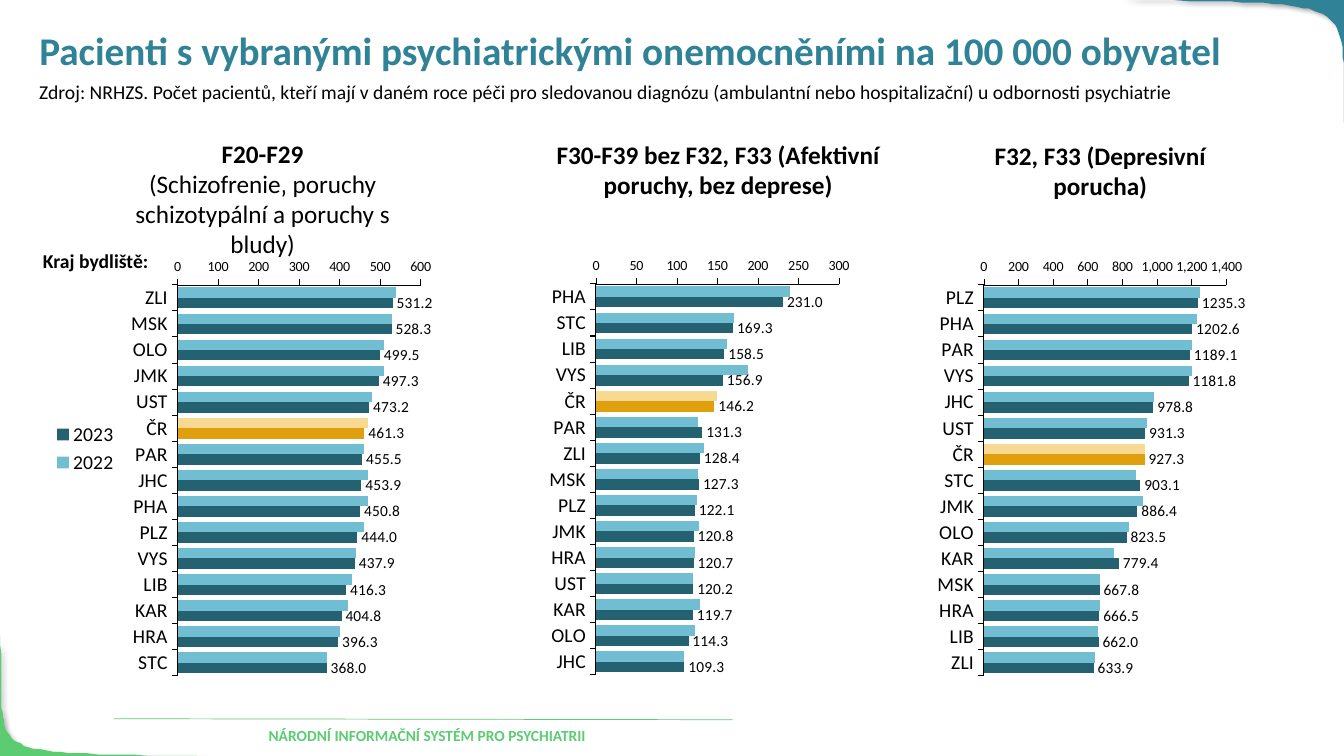
import pptx
import pptx.chart.data
import pptx.dml.color
import pptx.enum.chart
import pptx.enum.shapes
import pptx.enum.text
import pptx.oxml
import pptx.oxml.ns
import pptx.util
from lxml import etree

Pt = pptx.util.Pt
FONT = "Calibri"
COLORS = {
    "text": "000000", "title": "308297", "green": "5BCC72",
    "2022": "71BED2", "2023": "246171",
    "2022 country": "F8D992", "2023 country": "E0A00E",
}
COUNTRY = "ČR"
TITLE = "Pacienti s vybranými psychiatrickými onemocněními na 100 000 obyvatel"
SOURCE = ("Zdroj: NRHZS. Počet pacientů, kteří mají v daném roce péči pro sledovanou "
          "diagnózu (ambulantní nebo hospitalizační) u odbornosti psychiatrie")
FOOTER = "NÁRODNÍ INFORMAČNÍ SYSTÉM PRO PSYCHIATRII"
REGION_LABEL = "Kraj bydliště:"

# Boxes are left, top, width, height in points.
CHART_SIZE = (283.7, 339.8)
PANELS = [
    {
        "heading": "F20-F29\v(Schizofrenie‚ poruchy schizotypální a poruchy s bludy)",
        "heading_box": (81.4, 95, 212.4, 72.7),
        "chart_at": (30.2, 150.5), "maximum": 600, "step": 100, "legend": True,
        "regions": "ZLI MSK OLO JMK UST ČR PAR JHC PHA PLZ VYS LIB KAR HRA STC",
        "2022": (540, 530, 510, 510, 480, 470, 460, 470, 470, 460, 440, 430, 420, 400, 370),
        "2023": (531.2, 528.3, 499.5, 497.3, 473.2, 461.3, 455.5, 453.9, 450.8, 444,
                 437.9, 416.3, 404.8, 396.3, 368),
    },
    {
        "heading": "F30-F39 bez F32, F33 (Afektivní poruchy, bez deprese)",
        "heading_box": (386.6, 95.8, 252.7, 51.1),
        "chart_at": (329, 149.8), "maximum": 300, "step": 50, "legend": False,
        "regions": "PHA STC LIB VYS ČR PAR ZLI MSK PLZ JMK HRA UST KAR OLO JHC",
        "2022": (240, 171, 162, 188, 150, 126, 134, 126, 125, 127, 122, 120, 129, 122, 109),
        "2023": (231, 169.3, 158.5, 156.9, 146.2, 131.3, 128.4, 127.3, 122.1, 120.8,
                 120.7, 120.2, 119.7, 114.3, 109.3),
    },
    {
        "heading": "F32, F33 (Depresivní porucha)",
        "heading_box": (679.7, 96.5, 212.4, 51.1),
        "chart_at": (606.2, 150.5), "maximum": 1400, "step": 200, "legend": False,
        "regions": "PLZ PHA PAR VYS JHC UST ČR STC JMK OLO KAR MSK HRA LIB ZLI",
        "2022": (1250, 1230, 1200, 1200, 980, 940, 930, 880, 920, 840, 750, 670, 670, 660, 640),
        "2023": (1235.3, 1202.6, 1189.1, 1181.8, 978.8, 931.3, 927.3, 903.1, 886.4, 823.5,
                 779.4, 667.8, 666.5, 662, 633.9),
    },
]
# Each corner: four Bézier points of its curved edge, then the slide corner.
CORNERS = [
    ("green", [(153.4, 540.7), (-24.5, 535.7), (5.8, 546.5), (0, 453.6)], (-0.7, 540.7)),
    ("title", [(799.9, -0.7), (986.4, 5), (954.7, -7.2), (961.2, 102.2)], (961.2, -0.7)),
]
CURVE_STEPS = 40
PLOT_LAYOUT = {"x": 0.341, "y": 0.156, "w": 0.612, "h": 0.822}


def rgb(name):
    return pptx.dml.color.RGBColor.from_string(COLORS[name])


def set_font(font, size, color="text", bold=False):
    font.name, font.size, font.bold = FONT, Pt(size), bold
    font.color.rgb = rgb(color)


def write_text(shape, text, size, color="text", bold=False, align="LEFT", wrap=True,
               spacing=None):
    frame = shape.text_frame
    frame.text = text
    frame.word_wrap = wrap
    frame.auto_size = pptx.enum.text.MSO_AUTO_SIZE.NONE
    frame.vertical_anchor = pptx.enum.text.MSO_ANCHOR.TOP
    paragraph = frame.paragraphs[0]
    paragraph.alignment = pptx.enum.text.PP_ALIGN[align]
    paragraph.line_spacing = spacing
    set_font(paragraph.runs[0].font, size, color, bold)


def add_text(slide, box, text, size, **options):
    write_text(slide.shapes.add_textbox(*map(Pt, box)), text, size, **options)


def add_corner(slide, color, curve, corner):
    points = []
    for step in range(CURVE_STEPS + 1):
        t = step / CURVE_STEPS
        weights = ((1 - t) ** 3, 3 * t * (1 - t) ** 2, 3 * t ** 2 * (1 - t), t ** 3)
        points.append(tuple(sum(w * point[axis] for w, point in zip(weights, curve))
                            for axis in (0, 1)))
    builder = slide.shapes.build_freeform(*points[0], scale=Pt(1))
    builder.add_line_segments(points[1:] + [corner], close=True)
    shape = builder.convert_to_shape()
    shape.fill.solid()
    shape.fill.fore_color.rgb = rgb(color)
    shape.line.fill.background()
    shape.shadow.inherit = False
    effects = shape.element.spPr.find(pptx.oxml.ns.qn("a:effectLst"))
    effects.append(pptx.oxml.parse_xml(
        f'<a:outerShdw {pptx.oxml.ns.nsdecls("a")} blurRad="{Pt(4)}" dist="{Pt(3)}" '
        'dir="2700000" algn="tl" rotWithShape="0"><a:srgbClr val="000000">'
        '<a:alpha val="40000"/></a:srgbClr></a:outerShdw>'))


def set_plot_layout(chart):
    area = chart._chartSpace.chart.plotArea
    for old in area.findall(pptx.oxml.ns.qn("c:layout")):
        area.remove(old)
    fields = [("layoutTarget", "inner"), ("xMode", "edge"), ("yMode", "edge")]
    fields += PLOT_LAYOUT.items()
    body = "".join(f'<c:{tag} val="{value}"/>' for tag, value in fields)
    area.insert(0, pptx.oxml.parse_xml(
        f'<c:layout {pptx.oxml.ns.nsdecls("c")}><c:manualLayout>{body}'
        '</c:manualLayout></c:layout>'))


def format_axis(axis, size, line_width):
    axis.has_major_gridlines = False
    axis.major_tick_mark = pptx.enum.chart.XL_TICK_MARK.OUTSIDE
    axis.minor_tick_mark = pptx.enum.chart.XL_TICK_MARK.NONE
    axis.format.line.color.rgb = rgb("text")
    axis.format.line.width = Pt(line_width)
    set_font(axis.tick_labels.font, size)


def add_bar_chart(slide, panel):
    regions = panel["regions"].split()
    data = pptx.chart.data.CategoryChartData(number_format="0.0")
    data.categories = regions
    for year in ("2022", "2023"):
        data.add_series(year, panel[year])
    chart = slide.shapes.add_chart(
        pptx.enum.chart.XL_CHART_TYPE.BAR_CLUSTERED,
        *map(Pt, panel["chart_at"] + CHART_SIZE), data).chart
    set_font(chart.font, 14)
    chart.has_title = False
    set_plot_layout(chart)

    format_axis(chart.category_axis, 14, 0.75)
    chart.category_axis.reverse_order = True
    values = chart.value_axis
    format_axis(values, 10, 0.5)
    values.minimum_scale, values.maximum_scale = 0, panel["maximum"]
    values.major_unit = panel["step"]
    values.tick_labels.number_format = "#,##0"
    values.tick_labels.number_format_is_linked = False

    plot = chart.plots[0]
    plot.gap_width = 50
    plot.vary_by_categories = False
    for series in plot.series:
        country_bar = series.points[regions.index(COUNTRY)]
        for part, color in ((series, series.name), (country_bar, series.name + " country")):
            part.format.fill.solid()
            part.format.fill.fore_color.rgb = rgb(color)
    labels = plot.series[1].data_labels
    labels.show_value = True
    labels.position = pptx.enum.chart.XL_LABEL_POSITION.OUTSIDE_END
    labels.number_format = "0.0"
    labels.number_format_is_linked = False
    set_font(labels.font, 11)

    chart.has_legend = panel["legend"]
    if panel["legend"]:
        chart.legend.position = pptx.enum.chart.XL_LEGEND_POSITION.LEFT
        chart.legend.include_in_layout = False
        set_font(chart.legend.font, 14)


def main():
    presentation = pptx.Presentation()
    presentation.slide_width, presentation.slide_height = Pt(960), Pt(540)
    slide = presentation.slides.add_slide(presentation.slide_layouts[5])

    for corner in CORNERS:
        add_corner(slide, *corner)
    footer_line = slide.shapes.add_connector(
        pptx.enum.shapes.MSO_CONNECTOR.STRAIGHT, *map(Pt, (81.4, 513.4, 523.4, 514.1)))
    footer_line.line.color.rgb = rgb("green")
    footer_line.line.width = Pt(0.5)
    etree.SubElement(footer_line.element.spPr, pptx.oxml.ns.qn("a:effectLst"))
    add_text(slide, (107.3, 514.8, 396, 20.9), FOOTER, 11, color="green", bold=True,
             align="CENTER")

    title = slide.shapes.title
    title.left, title.top, title.width, title.height = map(Pt, (20.9, 18.7, 918.7, 45.4))
    write_text(title, TITLE, 28, color="title", bold=True, spacing=0.9)
    add_text(slide, (20.9, 53.3, 916.6, 41), SOURCE, 14)

    for panel in PANELS:
        add_bar_chart(slide, panel)
        add_text(slide, panel["heading_box"], panel["heading"], 18, bold=True, align="CENTER")
    add_text(slide, (23, 174.2, 90.7, 24.5), REGION_LABEL, 14, bold=True, align="CENTER",
             wrap=False)
    presentation.save("out.pptx")


if __name__ == "__main__":
    main()
